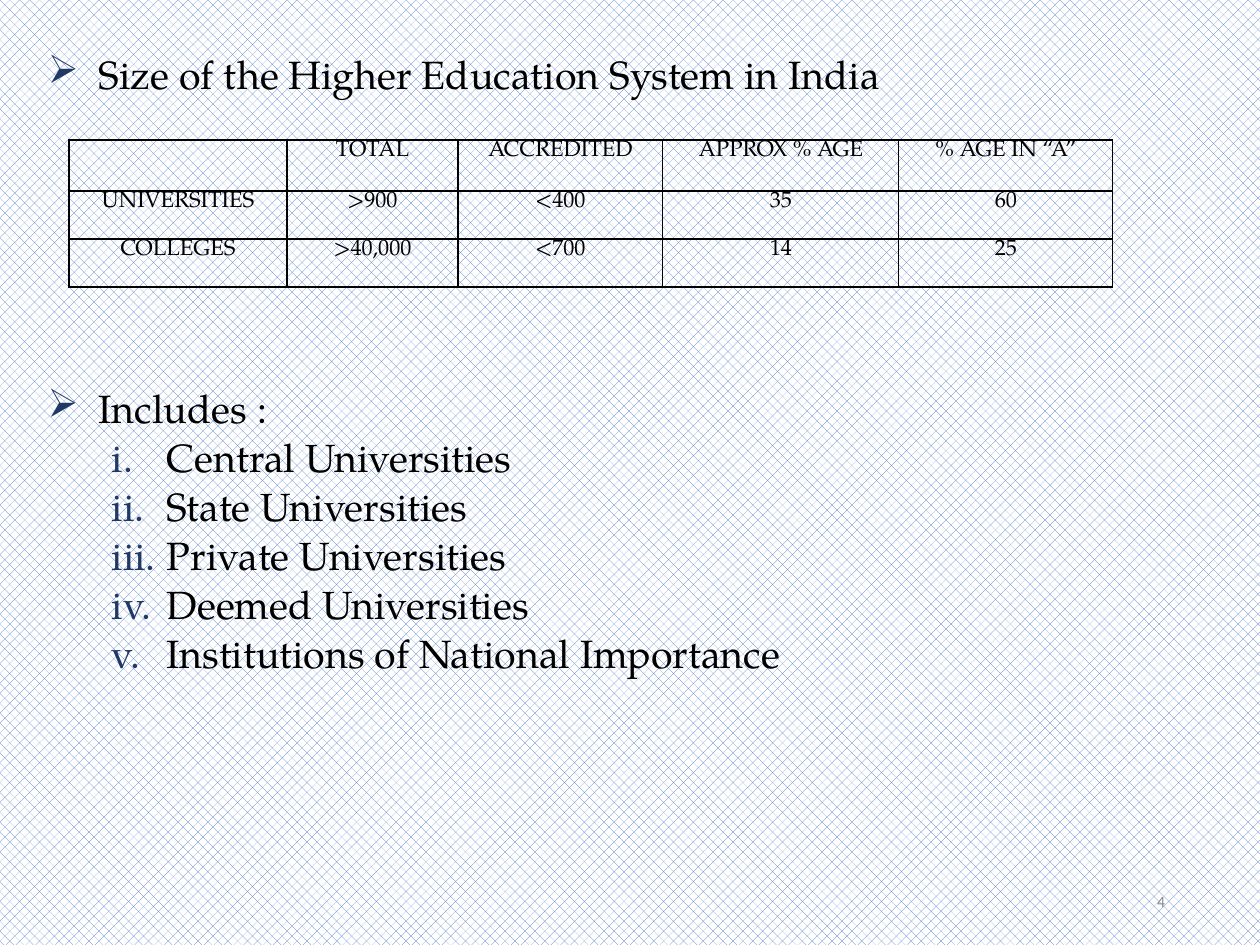
from lxml.etree import SubElement
from pptx import Presentation
from pptx.dml.color import RGBColor
from pptx.enum.dml import MSO_PATTERN
from pptx.enum.text import MSO_ANCHOR, MSO_AUTO_SIZE, PP_ALIGN
from pptx.oxml.ns import qn
from pptx.util import Emu, Pt

EMU_PER_PX = 10320
BLACK = RGBColor(0x00, 0x00, 0x00)
WHITE = RGBColor(0xFF, 0xFF, 0xFF)
NAVY = RGBColor(0x20, 0x38, 0x64)
BLUE = RGBColor(0x44, 0x72, 0xC4)
GREY = RGBColor(0x8C, 0x8C, 0x8C)
SERIF = "TeX Gyre Pagella"

HEADING = "Size of the Higher Education System in India"
INCLUDES = "Includes :"
INSTITUTIONS = [
    "Central Universities",
    "State Universities",
    "Private Universities",
    "Deemed Universities",
    "Institutions of National Importance",
]
ACCREDITATION = [
    ["", "TOTAL", "ACCREDITED", "APPROX % AGE", "% AGE IN “A”"],
    ["UNIVERSITIES", ">900", "<400", "35", "60"],
    ["COLLEGES", ">40,000", "<700", "14", "25"],
]
COLUMN_WIDTHS = [218, 171, 205, 236, 214]
ROW_HEIGHTS = [51, 48, 48]


def px(length):
    return Emu(length * EMU_PER_PX)


def format_text(paragraph, size, color=BLACK, font=SERIF, alignment=PP_ALIGN.LEFT):
    paragraph.alignment = alignment
    for run in paragraph.runs:
        run.font.size = Pt(size)
        run.font.name = font
        run.font.color.rgb = color


def add_bullet(paragraph, tag, attributes, margin, hanging, space_before):
    """Give the paragraph a navy bullet, a hanging indent and its spacing."""
    paragraph.line_spacing = 0.9
    paragraph.space_before = Pt(space_before)
    properties = paragraph._p.get_or_add_pPr()
    properties.set("marL", str(px(margin)))
    properties.set("indent", str(px(-hanging)))
    bullet_color = SubElement(properties, qn("a:buClr"))
    SubElement(bullet_color, qn("a:srgbClr"), val=str(NAVY))
    SubElement(properties, qn(tag), **attributes)


def format_arrow_line(paragraph):
    format_text(paragraph, 32)
    add_bullet(paragraph, "a:buChar", {"char": "➢"}, 51, 51, 10.7)


def format_numbered_line(paragraph):
    paragraph.level = 1
    format_text(paragraph, 32)
    add_bullet(paragraph, "a:buAutoNum", {"type": "romanLcPeriod"}, 119, 55, 5.3)


def prepare_frame(shape, anchor):
    frame = shape.text_frame
    frame.word_wrap = True
    frame.auto_size = MSO_AUTO_SIZE.NONE
    frame.vertical_anchor = anchor
    return frame


def place_heading(slide, left, top, width, height):
    title = slide.shapes.title
    title.left, title.top = px(left), px(top)
    title.width, title.height = px(width), px(height)
    frame = prepare_frame(title, MSO_ANCHOR.TOP)
    frame.text = HEADING
    format_arrow_line(frame.paragraphs[0])


def draw_borders(cell):
    properties = cell._tc.get_or_add_tcPr()
    for position, side in enumerate(("a:lnL", "a:lnR", "a:lnT", "a:lnB")):
        line = properties.makeelement(qn(side), {"w": str(Pt(1))})
        fill = SubElement(line, qn("a:solidFill"))
        SubElement(fill, qn("a:srgbClr"), val=str(BLACK))
        properties.insert(position, line)


def add_accreditation_table(slide, left, top):
    frame = slide.shapes.add_table(
        len(ROW_HEIGHTS), len(COLUMN_WIDTHS), px(left), px(top),
        px(sum(COLUMN_WIDTHS)), px(sum(ROW_HEIGHTS)))
    table = frame.table
    table.first_row = False
    table.horz_banding = False
    for column, width in zip(table.columns, COLUMN_WIDTHS):
        column.width = px(width)
    for row, height, texts in zip(table.rows, ROW_HEIGHTS, ACCREDITATION):
        row.height = px(height)
        for cell, text in zip(row.cells, texts):
            cell.margin_top = cell.margin_bottom = 0
            cell.fill.background()
            draw_borders(cell)
            cell.text_frame.text = text
            format_text(cell.text_frame.paragraphs[0], 18, alignment=PP_ALIGN.CENTER)


def add_institution_list(slide, left, top, width, height):
    box = slide.shapes.add_textbox(px(left), px(top), px(width), px(height))
    frame = prepare_frame(box, MSO_ANCHOR.TOP)
    frame.text = "\n".join([INCLUDES, *INSTITUTIONS])
    format_arrow_line(frame.paragraphs[0])
    for paragraph in frame.paragraphs[1:]:
        format_numbered_line(paragraph)


def add_slide_number(slide, left, top, width, height):
    box = slide.shapes.add_textbox(px(left), px(top), px(width), px(height))
    frame = prepare_frame(box, MSO_ANCHOR.MIDDLE)
    frame.text = "4"
    format_text(frame.paragraphs[0], 12.8, GREY, "Calibri", PP_ALIGN.RIGHT)


def paint_background(slide):
    fill = slide.background.fill
    fill.patterned()
    fill.pattern = MSO_PATTERN.PERCENT_25
    fill.fore_color.rgb = BLUE
    fill.back_color.rgb = WHITE


def main():
    presentation = Presentation()
    presentation.slide_width = px(1260)
    presentation.slide_height = px(945)
    slide = presentation.slides.add_slide(presentation.slide_layouts.get_by_name("Title Only"))
    paint_background(slide)
    place_heading(slide, 39, 51, 1181, 60)
    add_accreditation_table(slide, 69, 140)
    add_institution_list(slide, 39, 385, 1181, 310)
    add_slide_number(slide, 890, 876, 284, 50)
    presentation.save("out.pptx")


if __name__ == "__main__":
    main()
